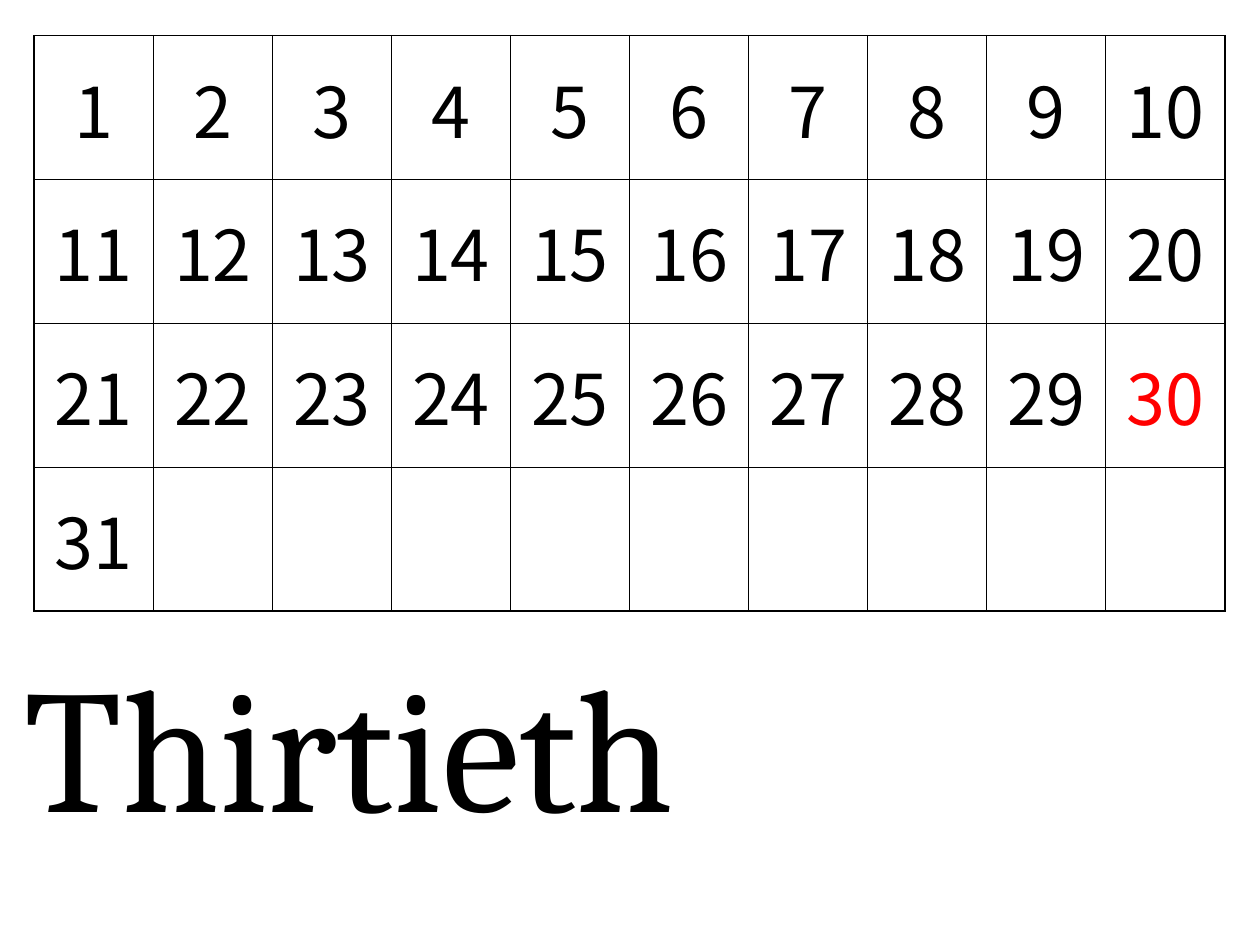
import pptx
import pptx.dml.color
import pptx.enum.text
import pptx.oxml
import pptx.oxml.ns
import pptx.util
from pptx.util import Cm

COLORS = {"ink": "000000", "today": "FF0000"}
DAYS, HIGHLIGHT = 31, 30
ROWS, COLS = 4, 10


class SlideBuilder:
    digits = {"name": "Noto Sans CJK JP", "size": pptx.util.Pt(40)}
    word = {"name": "Cambria", "size": pptx.util.Pt(100)}

    def __init__(self, prs):
        self.s = prs.slides.add_slide(prs.slide_layouts[6])

    def styled_run(self, p, text, style, color="ink"):
        r = p.add_run()
        r.text = text
        for name, value in style.items():
            setattr(r.font, name, value)
        r.font.color.rgb = pptx.dml.color.RGBColor.from_string(COLORS[color])

    def border(self, cell):
        tcPr = cell._tc.get_or_add_tcPr()
        for i, side in enumerate(("lnL", "lnR", "lnT", "lnB")):
            ln = pptx.oxml.parse_xml(
                f'<a:{side} {pptx.oxml.ns.nsdecls("a")} w="12700"><a:solidFill>'
                f'<a:srgbClr val="{COLORS["ink"]}"/></a:solidFill></a:{side}>')
            tcPr.insert(i, ln)

    def calendar(self, left, top, width, height):
        table = self.s.shapes.add_table(ROWS, COLS, left, top, width, height).table
        table.first_row = table.horz_banding = False
        for i, cell in enumerate(table.iter_cells(), start=1):
            cell.fill.background()
            self.border(cell)
            cell.vertical_anchor = pptx.enum.text.MSO_ANCHOR.MIDDLE
            if i <= DAYS:
                p = cell.text_frame.paragraphs[0]
                p.alignment = pptx.enum.text.PP_ALIGN.CENTER
                self.styled_run(p, str(i), self.digits,
                                "today" if i == HIGHLIGHT else "ink")

    def text(self, text, left, top, width, height):
        tf = self.s.shapes.add_textbox(left, top, width, height).text_frame
        tf.word_wrap = False
        tf.auto_size = pptx.enum.text.MSO_AUTO_SIZE.SHAPE_TO_FIT_TEXT
        self.styled_run(tf.paragraphs[0], text, self.word)


def main():
    prs = pptx.Presentation()
    prs.slide_width, prs.slide_height = Cm(25.4), Cm(19.05)
    slide = SlideBuilder(prs)

    # Days of the month
    slide.calendar(Cm(0.69), Cm(0.72), Cm(24), Cm(11.6))

    # Ordinal of the highlighted day
    slide.text("Thirtieth", Cm(0.25), Cm(12.73), Cm(15.62), Cm(4.52))

    prs.save("out.pptx")


if __name__ == "__main__":
    main()
